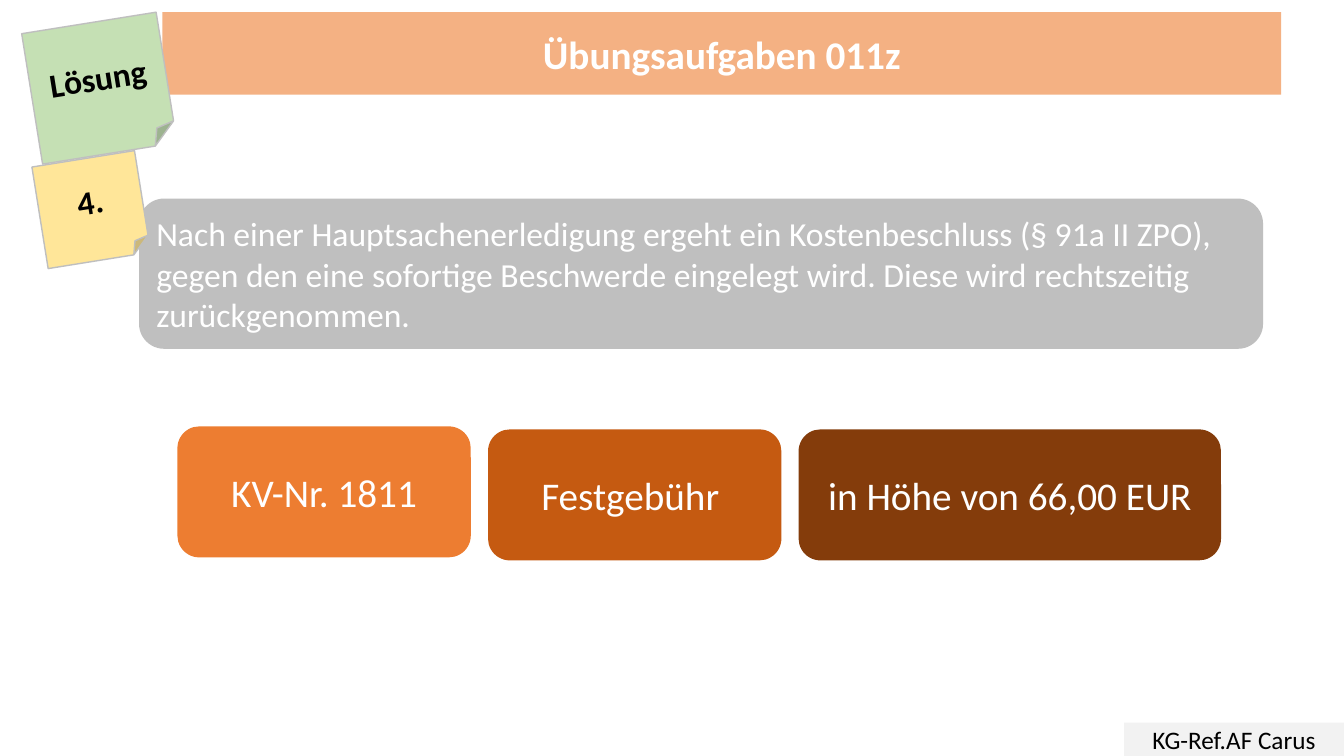
from dataclasses import dataclass

from lxml import etree
from pptx import Presentation
from pptx.dml.color import RGBColor
from pptx.enum.shapes import MSO_SHAPE
from pptx.enum.text import MSO_ANCHOR, MSO_AUTO_SIZE, PP_ALIGN
from pptx.oxml.ns import qn
from pptx.shapes.base import BaseShape
from pptx.slide import Slide
from pptx.util import Emu, Inches, Pt

ROUNDED = MSO_SHAPE.ROUNDED_RECTANGLE
NOTE = MSO_SHAPE.FOLDED_CORNER
RECT = MSO_SHAPE.RECTANGLE
LEFT, CENTER = PP_ALIGN.LEFT, PP_ALIGN.CENTER
MIDDLE = MSO_ANCHOR.MIDDLE
NO_AUTOFIT = MSO_AUTO_SIZE.NONE

WIDTH, HEIGHT = Inches(13.33), Inches(7.5)
TITLE_LAYOUT = 5
NOTE_TILT = -9.1


@dataclass(frozen=True)
class Theme:
    font: str = "Calibri"
    large: int = 28
    medium: int = 24
    small: int = 18
    white: str = "FFFFFF"
    black: str = "000000"
    grey: str = "BFBFBF"
    pale_grey: str = "F2F2F2"
    peach: str = "F4B183"
    green: str = "C5E0B4"
    yellow: str = "FFE699"
    orange: str = "ED7D31"
    rust: str = "C55A11"
    brown: str = "843C0B"


THEME = Theme()


@dataclass(frozen=True)
class Area:
    """Place and size in percent of the slide's width and height."""
    x: float
    y: float
    w: float
    h: float

    def emu(self) -> tuple[Emu, Emu, Emu, Emu]:
        return (Emu(int(WIDTH * self.x / 100)), Emu(int(HEIGHT * self.y / 100)),
                Emu(int(WIDTH * self.w / 100)), Emu(int(HEIGHT * self.h / 100)))


@dataclass(frozen=True)
class Box:
    text: str
    area: Area
    fill: str
    size: int
    color: str = THEME.white
    kind: MSO_SHAPE = ROUNDED
    bold: bool = False
    align: PP_ALIGN = CENTER


@dataclass(frozen=True)
class Step:
    text: str
    y: float
    w: float
    fill: str


TITLE = Box("Übungsaufgaben 011z", Area(12.08, 1.6, 83.25, 10.93),
            THEME.peach, THEME.large, bold=True)
CASE = Box("Nach einer Hauptsachenerledigung ergeht ein Kostenbeschluss (§ 91a II ZPO),\n"
           "gegen den eine sofortige Beschwerde eingelegt wird. "
           "Diese wird rechtszeitig zurückgenommen.",
           Area(10.35, 26.27, 83.63, 19.87), THEME.grey, THEME.medium, align=LEFT)
SOLUTION = Box("Lösung", Area(2.33, 2.93, 10.13, 17.47), THEME.green,
               THEME.medium, THEME.black, NOTE, True)
FOOTER = Box("KG-Ref.AF Carus", Area(83.63, 95.6, 16.37, 4.4), THEME.pale_grey,
             THEME.small, THEME.black, RECT)
NUMBER = Box("4.", Area(2.93, 20.93, 7.73, 13.6), THEME.yellow,
             THEME.medium, THEME.black, NOTE, True)

STEPS = (Step("KV-Nr. 1811", 56.4, 21.83, THEME.orange),
         Step("Festgebühr ", 56.8, 21.83, THEME.rust),
         Step("in Höhe von 66,00 EUR", 56.8, 31.43, THEME.brown))
STEP_LEFT, STEP_GAP, STEP_HEIGHT = 13.2, 1.28, 17.33


def style(sp: BaseShape, box: Box) -> None:
    """Fill the shape and set its formatted text."""
    sp.fill.solid()
    sp.fill.fore_color.rgb = RGBColor.from_string(box.fill)
    tf = sp.text_frame
    tf.text = box.text
    tf.word_wrap = True
    tf.auto_size = NO_AUTOFIT
    tf.vertical_anchor = MIDDLE
    for p in tf.paragraphs:
        p.alignment = box.align
        for r in p.runs:
            r.font.name = THEME.font
            r.font.size = Pt(box.size)
            r.font.bold = box.bold
            r.font.color.rgb = RGBColor.from_string(box.color)


def fill_title(slide: Slide, box: Box) -> None:
    sp = slide.shapes.title
    sp.left, sp.top, sp.width, sp.height = box.area.emu()
    geometry = etree.SubElement(sp.element.spPr, qn("a:prstGeom"), prst="roundRect")
    etree.SubElement(geometry, qn("a:avLst"))
    style(sp, box)


def add_box(slide: Slide, box: Box) -> None:
    sp = slide.shapes.add_shape(box.kind, *box.area.emu())
    sp.shadow.inherit = False
    style(sp, box)
    if box.kind == NOTE:
        sp.rotation = NOTE_TILT
        sp.line.color.rgb = RGBColor.from_string(THEME.grey)
        sp.line.width = Pt(1)
    else:
        sp.line.fill.background()


def add_steps(slide: Slide) -> None:
    x = STEP_LEFT
    for step in STEPS:
        area = Area(x, step.y, step.w, STEP_HEIGHT)
        add_box(slide, Box(step.text, area, step.fill, THEME.large))
        x += step.w + STEP_GAP


def main() -> None:
    prs = Presentation()
    prs.slide_width, prs.slide_height = WIDTH, HEIGHT
    slide = prs.slides.add_slide(prs.slide_layouts[TITLE_LAYOUT])
    fill_title(slide, TITLE)
    for box in (CASE, SOLUTION, FOOTER, NUMBER):
        add_box(slide, box)
    add_steps(slide)
    prs.save("out.pptx")


if __name__ == "__main__":
    main()
